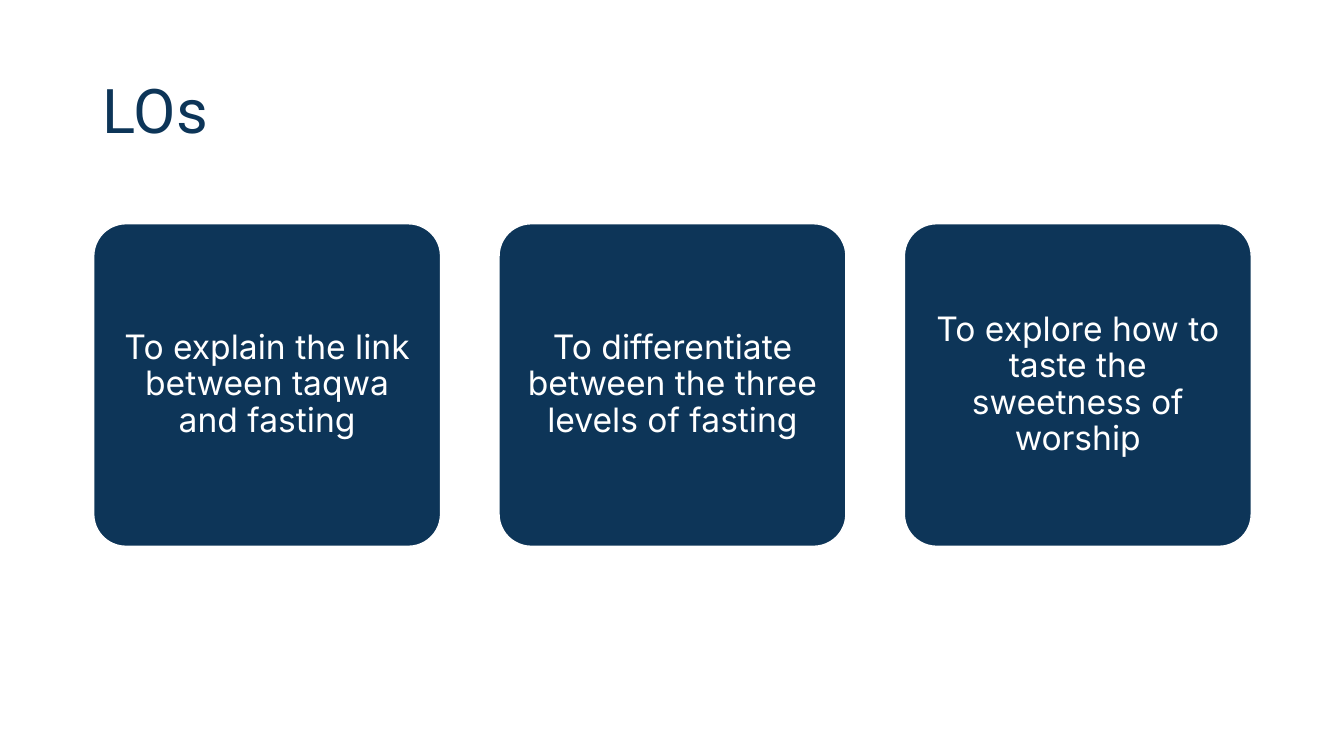
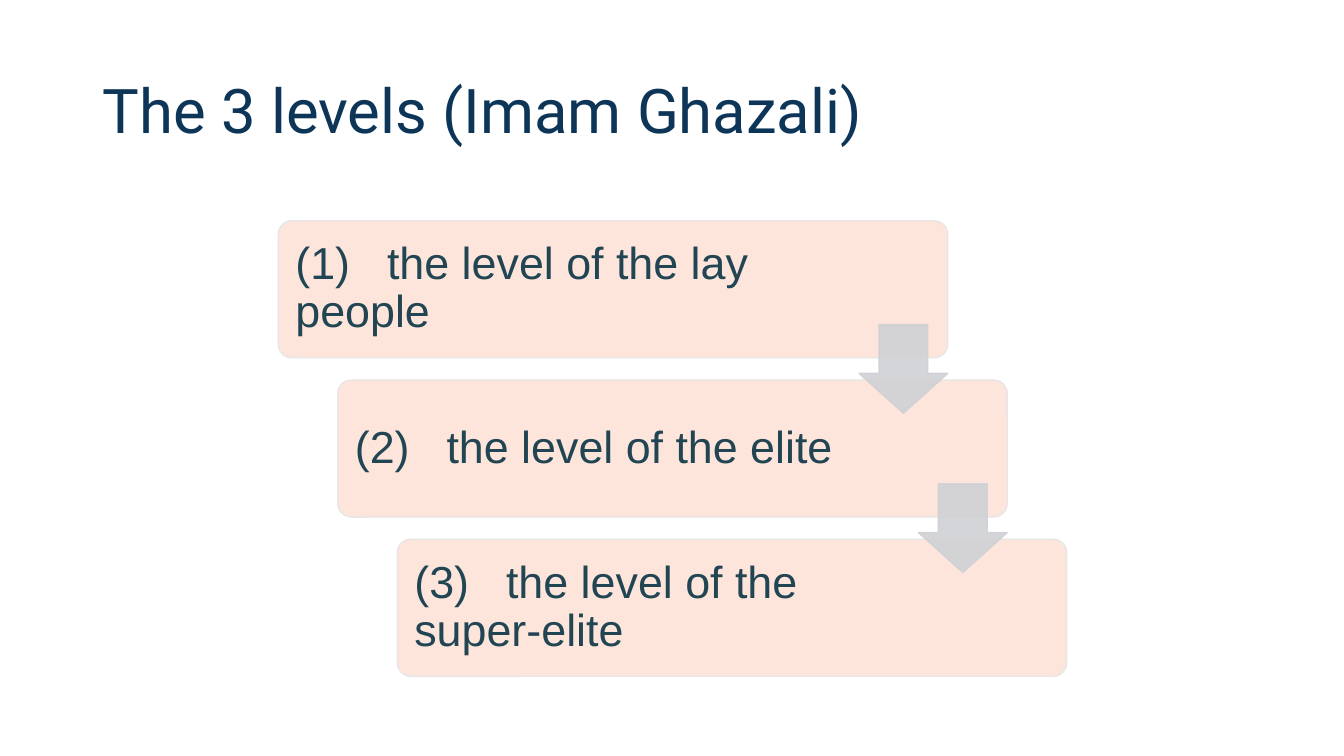
import pptx
import pptx.util
import pptx.dml.color
import pptx.enum.shapes
import pptx.enum.text
import pptx.oxml
import pptx.oxml.ns

Inches = pptx.util.Inches
Pt = pptx.util.Pt
SHAPE = pptx.enum.shapes.MSO_SHAPE
ALIGN = pptx.enum.text.PP_ALIGN
MIDDLE = pptx.enum.text.MSO_ANCHOR.MIDDLE
COLORS = {
    "navy": "0D3558",
    "white": "FFFFFF",
    "peach": "FDE5DB",
    "edge": "E7E6E6",
    "teal": "214553",
    "gray": "CFD1D4",
}


def rgb(name):
    return pptx.dml.color.RGBColor.from_string(COLORS[name])


def write(shape, text, font, size, color, align=ALIGN.LEFT, tab=None):
    frame = shape.text_frame
    frame.word_wrap = True
    frame.vertical_anchor = MIDDLE
    para = frame.paragraphs[0]
    para.text = text
    para.alignment = align
    para.line_spacing = 0.9
    if tab:
        props = para._p.get_or_add_pPr()
        tabs = pptx.oxml.ns.qn("a:tabLst")
        stop = props.makeelement(tabs, {})
        stop.append(stop.makeelement(
            pptx.oxml.ns.qn("a:tab"), {"pos": str(Inches(tab)), "algn": "l"}))
        props.append(stop)
    para.font.name = font
    para.font.size = Pt(size)
    para.font.color.rgb = rgb(color)


def inset(shape, left, top, right, bottom):
    frame = shape.text_frame
    frame.margin_left = Inches(left)
    frame.margin_top = Inches(top)
    frame.margin_right = Inches(right)
    frame.margin_bottom = Inches(bottom)


def title(slide, text):
    box = slide.shapes.add_textbox(
        Inches(0.92), Inches(0.4), Inches(11.5), Inches(1.45))
    write(box, text, "Roboto", 44, "navy")


def form(slide, kind, place, fill, line, adjust):
    shape = slide.shapes.add_shape(kind, *[Inches(n) for n in place])
    shape.shadow.inherit = False
    for index, value in enumerate(adjust):
        shape.adjustments[index] = value
    shape.fill.solid()
    shape.fill.fore_color.rgb = rgb(fill)
    shape.line.color.rgb = rgb(line)
    shape.line.width = Pt(1)
    return shape


def card(slide, left, text):
    shape = form(slide, SHAPE.ROUNDED_RECTANGLE, (left, 2.22, 3.44, 3.2),
                 "navy", "white", [0.1])
    inset(shape, 0.1, 0.1, 0.1, 0.1)
    write(shape, text, "Inter", 24, "white", ALIGN.CENTER)


def level(slide, left, top, text):
    shape = form(slide, SHAPE.ROUNDED_RECTANGLE, (left, top, 6.64, 1.36),
                 "peach", "edge", [0.1])
    inset(shape, 0.13, 0.13, 1.6, 0.13)
    write(shape, text, "Arial", 32, "teal", tab=0.91)


def arrow(slide, left, top):
    shape = form(slide, SHAPE.DOWN_ARROW, (left, top, 0.88, 0.88),
                 "gray", "gray", [0.55, 0.45])
    for color in shape._element.spPr.iter(pptx.oxml.ns.qn("a:srgbClr")):
        alpha = color.makeelement(pptx.oxml.ns.qn("a:alpha"), {"val": "90000"})
        color.append(alpha)


def goals(slide):
    title(slide, "LOs")
    texts = [
        "To explain the link between taqwa and fasting",
        "To differentiate between the three levels of fasting",
        "To explore how to taste the sweetness of worship",
    ]
    for index, text in enumerate(texts):
        card(slide, 0.93 + 4.02 * index, text)


def levels(slide):
    title(slide, "The 3 levels (Imam Ghazali)")
    names = ["lay people", "elite", "super-elite"]
    spots = [(2.76 + 0.59 * n, 2.19 + 1.58 * n) for n in range(len(names))]
    for index, (name, spot) in enumerate(zip(names, spots), 1):
        level(slide, *spot, f"({index})\tthe level of the {name}")
    for left, top in spots[:-1]:
        arrow(slide, left + 5.76, top + 1.03)


def main():
    deck = pptx.Presentation()
    deck.slide_width = Inches(13.33)
    deck.slide_height = Inches(7.5)
    for build in (goals, levels):
        build(deck.slides.add_slide(deck.slide_layouts[6]))
    deck.save("out.pptx")


if __name__ == "__main__":
    main()
